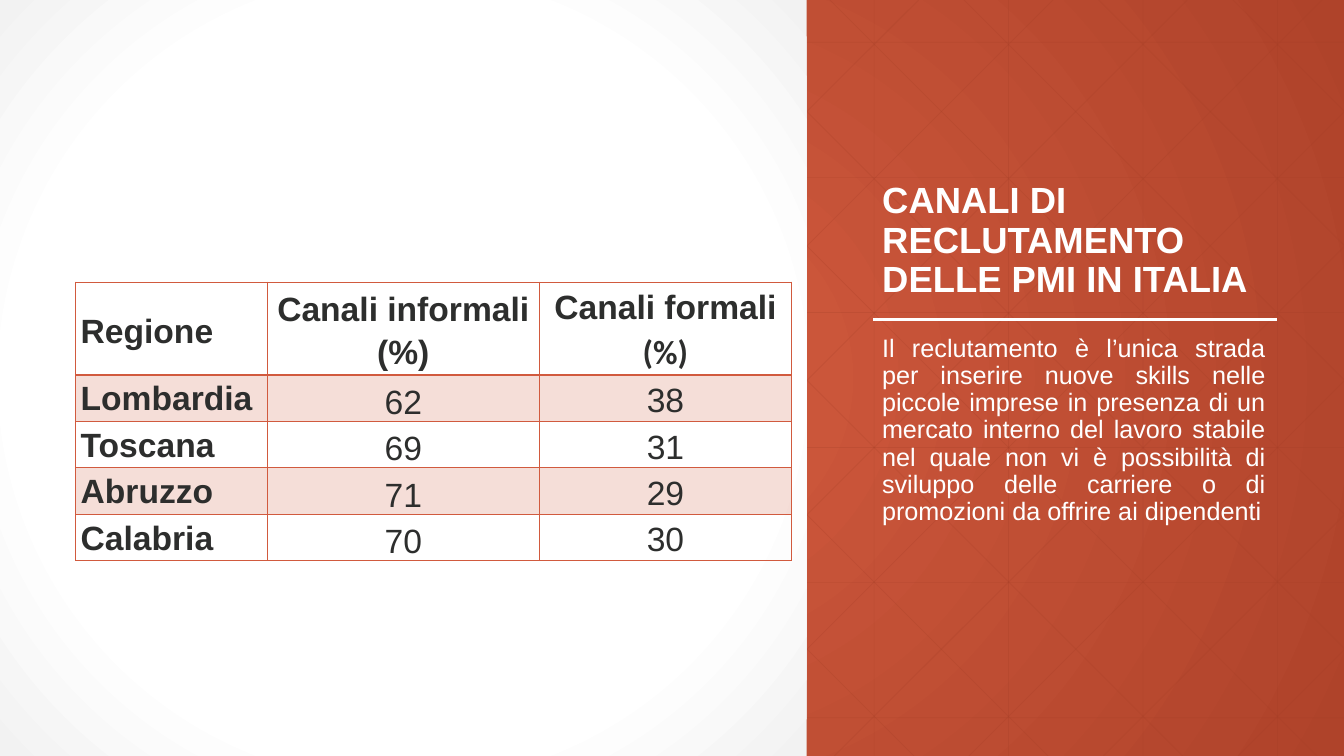
"""Builds a slide on the recruitment channels of Italian small firms."""
import pptx
import pptx.dml.color
import pptx.enum.shapes
import pptx.enum.text
import pptx.oxml
import pptx.oxml.ns
import pptx.util

Inches = pptx.util.Inches
Pt = pptx.util.Pt
RGBColor = pptx.dml.color.RGBColor
Align = pptx.enum.text.PP_ALIGN
Anchor = pptx.enum.text.MSO_ANCHOR
qn = pptx.oxml.ns.qn

WHITE = RGBColor(0xFF, 0xFF, 0xFF)
PALE_GRAY = RGBColor(0xF2, 0xF2, 0xF2)
ORANGE = RGBColor(0xD1, 0x5A, 0x3E)
RUST = RGBColor(0xAF, 0x43, 0x2A)
GRID_RUST = RGBColor(0xA4, 0x3F, 0x27)
INK = RGBColor(0x2D, 0x2E, 0x2D)

WIDTH, HEIGHT = 13.33, 7.5
PANEL_WIDTH = 8
GRID_STEP = 4 / 3
TITLE = "CANALI DI RECLUTAMENTO DELLE PMI IN ITALIA"
BODY = (
    "Il reclutamento è l’unica strada per inserire nuove skills nelle piccole "
    "imprese in presenza di un mercato interno del lavoro stabile nel quale non "
    "vi è possibilità di sviluppo delle carriere o di promozioni da offrire ai "
    "dipendenti"
)
ROWS = [
    ("Regione", "Canali informali (%)", "Canali formali\n(%)"),
    ("Lombardia", "62", "38"),
    ("Toscana", "69", "31"),
    ("Abruzzo", "71", "29"),
    ("Calabria", "70", "30"),
]
COLUMN_WIDTHS = (1.9, 2.7, 2.5)
ROW_HEIGHTS = (0.9, 0.43, 0.43, 0.43, 0.43)


def drawing_element(markup):
    return pptx.oxml.parse_xml(markup.replace(
        ">", f" {pptx.oxml.ns.nsdecls('a')}>", 1))


def set_opacity(parent, percent):
    color = parent.find(".//" + qn("a:srgbClr"))
    color.append(pptx.oxml.parse_xml(
        f"<a:alpha {pptx.oxml.ns.nsdecls('a')} val='{percent * 1000}'/>"))


def radial_gradient(fill, owner, stops):
    fill.gradient()
    gradient = owner.find(".//" + qn("a:gradFill"))
    for child in list(gradient):
        gradient.remove(child)
    stop_markup = "".join(
        f"<a:gs pos='{position * 1000}'><a:srgbClr val='{color}'/></a:gs>"
        for position, color in stops)
    gradient.append(drawing_element(f"<a:gsLst>{stop_markup}</a:gsLst>"))
    gradient.append(drawing_element(
        "<a:path path='circle'>"
        "<a:fillToRect l='50000' t='50000' r='50000' b='50000'/></a:path>"))


def add_line(slide, start, end, color, width, opacity=100):
    line = slide.shapes.add_connector(
        pptx.enum.shapes.MSO_CONNECTOR.STRAIGHT,
        *(Inches(value) for value in (*start, *end)))
    line.line.color.rgb = color
    line.line.width = Pt(width)
    properties = line._element.spPr
    if opacity < 100:
        set_opacity(properties, opacity)
    properties.append(drawing_element("<a:effectLst></a:effectLst>"))


def add_grid(slide):
    segments = []
    for index in range(6, 10):
        x = 0.67 + index * GRID_STEP
        segments.append(((x, 0), (x, HEIGHT)))
    for index in range(6):
        y = 0.42 + index * 1.34
        segments.append(((0, y), (WIDTH, y)))
    for index in range(1, 10):
        x = 0.23 + index * GRID_STEP
        drop = min(HEIGHT, WIDTH - x)
        segments.append(((x, 0), (x + drop, drop)))
    for index in range(9):
        x = 9.11 + index * GRID_STEP
        top = max(0, x - WIDTH)
        segments.append(((x - top, top), (x - HEIGHT, HEIGHT)))
    for start, end in segments:
        add_line(slide, start, end, GRID_RUST, 0.5, opacity=25)


def add_panel(slide):
    panel = slide.shapes.add_shape(
        pptx.enum.shapes.MSO_SHAPE.RECTANGLE, 0, 0,
        Inches(PANEL_WIDTH), Inches(HEIGHT))
    panel.shadow.inherit = False
    panel.line.fill.background()
    radial_gradient(panel.fill, panel._element,
                    [(0, WHITE), (69, WHITE), (100, PALE_GRAY)])


def write_text(frame, text, size, color, bold, alignment, spacing):
    frame.text = text
    frame.word_wrap = True
    for paragraph in frame.paragraphs:
        paragraph.alignment = alignment
        paragraph.line_spacing = spacing
        paragraph.space_before = Pt(0)
        for run in paragraph.runs:
            run.font.name = "Arial"
            run.font.size = Pt(size)
            run.font.bold = bold
            run.font.color.rgb = color


def place_title(slide):
    title = slide.shapes.title
    title.left, title.top = Inches(8.65), Inches(0.63)
    title.width, title.height = Inches(4), Inches(2.4)
    write_text(title.text_frame, TITLE, 26, WHITE, True, Align.LEFT, 0.9)
    title.text_frame.vertical_anchor = Anchor.BOTTOM
    title.text_frame.auto_size = pptx.enum.text.MSO_AUTO_SIZE.NONE
    slide.shapes._spTree.append(title._element)


def add_body(slide):
    body = slide.shapes.add_textbox(
        Inches(8.65), Inches(3.28), Inches(4), Inches(2.5))
    write_text(body.text_frame, BODY, 18, WHITE, False, Align.JUSTIFY, 0.9)


def set_borders(cell, widths):
    properties = cell._tc.get_or_add_tcPr()
    for side, width in widths.items():
        properties.append(drawing_element(
            f"<a:ln{side} w='{Pt(width)}'><a:solidFill>"
            f"<a:srgbClr val='{ORANGE}'/></a:solidFill></a:ln{side}>"))


def format_cell(cell, text, row, column):
    is_header = row == 0
    write_text(cell.text_frame, text, 24, INK, is_header or column == 0,
               Align.CENTER if column else Align.JUSTIFY, 1.15)
    cell.margin_left = cell.margin_right = Inches(0.05)
    cell.margin_top = cell.margin_bottom = 0
    cell.vertical_anchor = (
        Anchor.MIDDLE if is_header
        else (Anchor.TOP, Anchor.BOTTOM, Anchor.MIDDLE)[column])
    set_borders(cell, {"L": 1, "R": 1, "T": 2 if row == 1 else 1,
                       "B": 2 if is_header else 1})
    if row % 2:
        cell.fill.solid()
        cell.fill.fore_color.rgb = ORANGE
        set_opacity(cell._tc.tcPr.find(qn("a:solidFill")), 20)
    else:
        cell.fill.background()


def add_channel_table(slide):
    table = slide.shapes.add_table(
        len(ROWS), len(COLUMN_WIDTHS), Inches(0.75), Inches(2.8),
        Inches(sum(COLUMN_WIDTHS)), Inches(sum(ROW_HEIGHTS))).table
    table.first_row = False
    table.horz_banding = False
    for column, width in zip(table.columns, COLUMN_WIDTHS):
        column.width = Inches(width)
    for row, height in zip(table.rows, ROW_HEIGHTS):
        row.height = Inches(height)
    for row, texts in enumerate(ROWS):
        for column, text in enumerate(texts):
            format_cell(table.cell(row, column), text, row, column)
    unit = table.cell(0, 2).text_frame.paragraphs[1]
    unit.runs[0].font.name = "Calibri"


def main():
    presentation = pptx.Presentation()
    presentation.slide_width = Inches(WIDTH)
    presentation.slide_height = Inches(HEIGHT)
    slide = presentation.slides.add_slide(presentation.slide_layouts[5])
    radial_gradient(slide.background.fill, slide._element,
                    [(0, ORANGE), (100, RUST)])
    add_grid(slide)
    add_panel(slide)
    add_line(slide, (8.66, 3.17), (12.67, 3.17), WHITE, 1.5)
    place_title(slide)
    add_body(slide)
    add_channel_table(slide)
    presentation.save("out.pptx")


if __name__ == "__main__":
    main()
